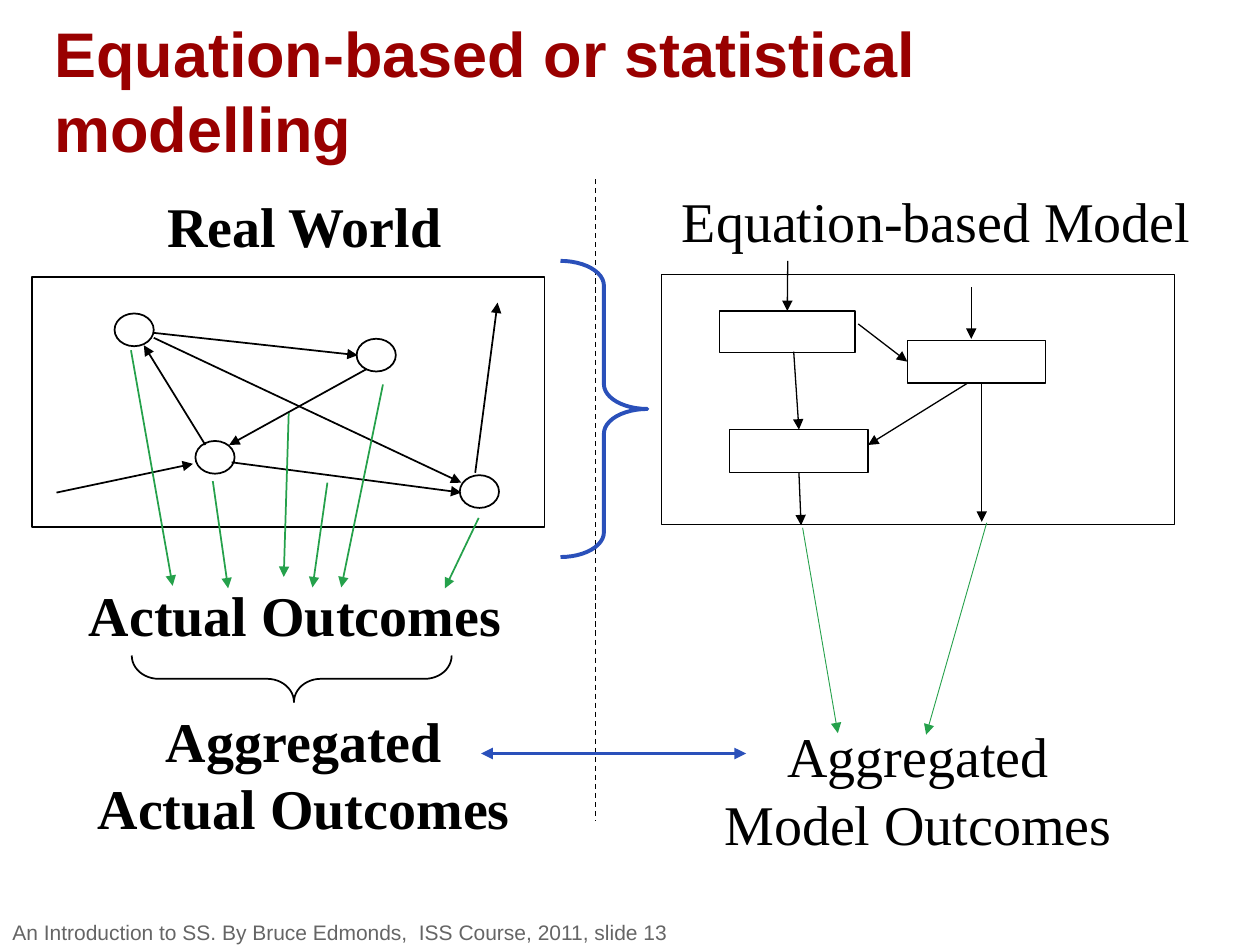
from lxml import etree
from pptx import Presentation
from pptx.dml.color import RGBColor
from pptx.enum.dml import MSO_LINE
from pptx.enum.shapes import MSO_CONNECTOR, MSO_SHAPE
from pptx.enum.text import MSO_ANCHOR, MSO_AUTO_SIZE, PP_ALIGN
from pptx.oxml.ns import qn
from pptx.util import Cm, Pt

STRAIGHT = MSO_CONNECTOR.STRAIGHT
RECTANGLE, OVAL, BRACE = MSO_SHAPE.RECTANGLE, MSO_SHAPE.OVAL, MSO_SHAPE.RIGHT_BRACE
DASH = MSO_LINE.DASH
MIDDLE = MSO_ANCHOR.MIDDLE
LEFT, CENTER = PP_ALIGN.LEFT, PP_ALIGN.CENTER
NO_FIT, GROW = MSO_AUTO_SIZE.NONE, MSO_AUTO_SIZE.SHAPE_TO_FIT_TEXT
TOP, LEFT_SIDE, BOTTOM = 0, 1, 2

BLACK, GREEN, BLUE = "000000", "25A14B", "2A50BA"
TITLE = {"name": "Arial", "size": Pt(36), "bold": True, "color": "990000"}
REAL = {"name": "Times New Roman", "size": Pt(32), "bold": True, "color": BLACK}
MODEL = {**REAL, "bold": False}
FOOTER = {"name": "Arial", "size": Pt(12), "bold": False, "color": "656565"}

LABELS = [
    ("Real World", (2.99, 3.73, 6.3, 1.6), REAL),
    ("Equation-based Model", (13.38, 3.63, 11, 1.6), MODEL),
    ("Actual Outcomes", (1.35, 11.58, 9.2, 1.6), REAL),
    ("Aggregated\nActual Outcomes", (1.53, 14.12, 9.2, 2.97), REAL),
    ("Aggregated\nModel Outcomes", (14.21, 14.43, 8.6, 2.97), MODEL),
]
AGENTS = [(2.31, 6.32), (7.19, 6.83), (3.94, 8.89), (9.27, 9.58)]
AGENT_LINKS = [
    ((3.1, 6.71), (7.21, 7.16)),
    ((7.39, 7.44), (4.62, 8.97)),
    ((3.1, 6.81), (9.3, 9.73)),
    ((9.58, 9.53), (10.03, 6.1)),
    ((4.67, 9.32), (9.3, 9.93)),
    ((4.14, 8.97), (2.9, 6.96)),
    ((1.14, 9.93), (3.89, 9.35)),
]
REAL_OUTCOMES = [
    ((4.29, 9.7), (4.6, 11.86)),
    ((7.72, 7.75), (6.88, 11.84)),
    ((9.65, 10.44), (8.97, 11.86)),
    ((2.64, 7.06), (3.48, 11.81)),
    ((6.6, 9.73), (6.3, 11.84)),
    ((5.82, 8.33), (5.72, 11.63)),
]
MODEL_OUTCOMES = [((16.18, 10.64), (16.89, 14.78)), ((19.89, 10.54), (18.67, 14.81))]
VARIABLES = [(14.5, 6.27, 2.74, 0.84), (18.29, 6.86, 2.79, 0.86), (14.71, 8.66, 2.79, 0.86)]


def color(value):
    return RGBColor.from_string(value)


class SlideBuilder:
    def __init__(self, slide):
        self.slide = slide

    def format_text(self, frame, text, style, align):
        paragraph = frame.paragraphs[0]
        paragraph.text = text
        paragraph.alignment = align
        for key, value in style.items():
            if key == "color":
                paragraph.font.color.rgb = color(value)
            else:
                setattr(paragraph.font, key, value)

    def title(self, text, box):
        shape = self.slide.shapes.title
        shape.left, shape.top, shape.width, shape.height = map(Cm, box)
        frame = shape.text_frame
        frame.auto_size, frame.vertical_anchor = NO_FIT, MIDDLE
        self.format_text(frame, text, TITLE, LEFT)

    def label(self, text, box, style):
        frame = self.slide.shapes.add_textbox(*map(Cm, box)).text_frame
        frame.word_wrap, frame.auto_size = False, GROW
        self.format_text(frame, text, style, CENTER)

    def footer(self, text, box):
        frame = self.slide.shapes.add_textbox(*map(Cm, box)).text_frame
        frame.word_wrap, frame.vertical_anchor = True, MIDDLE
        self.format_text(frame, text, FOOTER, LEFT)

    def outline(self, kind, box, line=BLACK, width=1.0, adjustments=(), rotation=0):
        """Add an unfilled preset shape."""
        shape = self.slide.shapes.add_shape(kind, *map(Cm, box))
        shape.shadow.inherit = False
        shape.fill.background()
        shape.line.color.rgb = color(line)
        shape.line.width = Pt(width)
        shape.rotation = rotation
        for index, value in enumerate(adjustments):
            shape.adjustments[index] = value
        return shape

    def line(self, start, end, line=BLACK, width=1.0, ends=("tailEnd",), dash=None):
        """Draw from start to end; each is a point or a (shape, side) pair."""
        points = [(0, 0) if hasattr(point[0], "shape_type") else point for point in (start, end)]
        connector = self.slide.shapes.add_connector(
            STRAIGHT, *(Cm(value) for point in points for value in point))
        for point, connect in ((start, connector.begin_connect), (end, connector.end_connect)):
            if hasattr(point[0], "shape_type"):
                connect(*point)
        connector.line.color.rgb = color(line)
        connector.line.width = Pt(width)
        if dash:
            connector.line.dash_style = dash
        properties = connector.line._get_or_add_ln()
        for name in ends:
            etree.SubElement(properties, qn(f"a:{name}"), type="triangle")
        etree.SubElement(connector._element.spPr, qn("a:effectLst"))


def main():
    presentation = Presentation()
    presentation.slide_width, presentation.slide_height = Cm(25.4), Cm(19.05)
    builder = SlideBuilder(presentation.slides.add_slide(presentation.slide_layouts[5]))

    builder.title("Equation-based or statistical modelling", (0.84, 0.64, 21.39, 2.34))
    for label in LABELS:
        builder.label(*label)
    builder.line((12.01, 3.61), (12.01, 16.56), width=0.75, ends=(), dash=DASH)

    # Real world
    builder.outline(RECTANGLE, (0.64, 5.59, 10.34, 5.03))
    for left, top in AGENTS:
        builder.outline(OVAL, (left, top, 0.79, 0.66))
    for start, end in AGENT_LINKS:
        builder.line(start, end)
    builder.outline(BRACE, (5.41, 10.46, 0.94, 6.45), adjustments=(0.575, 0.493), rotation=90)
    for start, end in REAL_OUTCOMES:
        builder.line(start, end, GREEN)

    # Equation-based model
    builder.outline(RECTANGLE, (13.34, 5.54, 10.34, 5.03), width=0.5)
    for start, end in MODEL_OUTCOMES:
        builder.line(start, end, GREEN, 0.5)
    first, second, third = [builder.outline(RECTANGLE, box, width=0.75) for box in VARIABLES]
    model_links = [
        ((19.58, 5.79), (19.58, 6.83)),
        ((15.88, 5.26), (first, TOP)),
        ((16, 7.09), (third, TOP)),
        ((19.51, 7.72), (17.5, 8.97)),
        ((17.3, 6.53), (second, LEFT_SIDE)),
        ((19.79, 7.72), (19.79, 10.52)),
        ((third, BOTTOM), (16.15, 10.59)),
    ]
    for start, end in model_links:
        builder.line(start, end, width=0.75)

    # Comparison of the two sides
    builder.line((9.7, 15.19), (15.04, 15.19), BLUE, 2.25, ends=("headEnd", "tailEnd"))
    builder.outline(BRACE, (11.3, 5.26, 1.75, 5.97), BLUE, 2.25, adjustments=(0.285, 0.5))
    builder.footer("An Introduction to SS. By Bruce Edmonds,  ISS Course, 2011, slide 13",
                   (0, 18.52, 25.4, 0.53))
    presentation.save("out.pptx")


if __name__ == "__main__":
    main()
